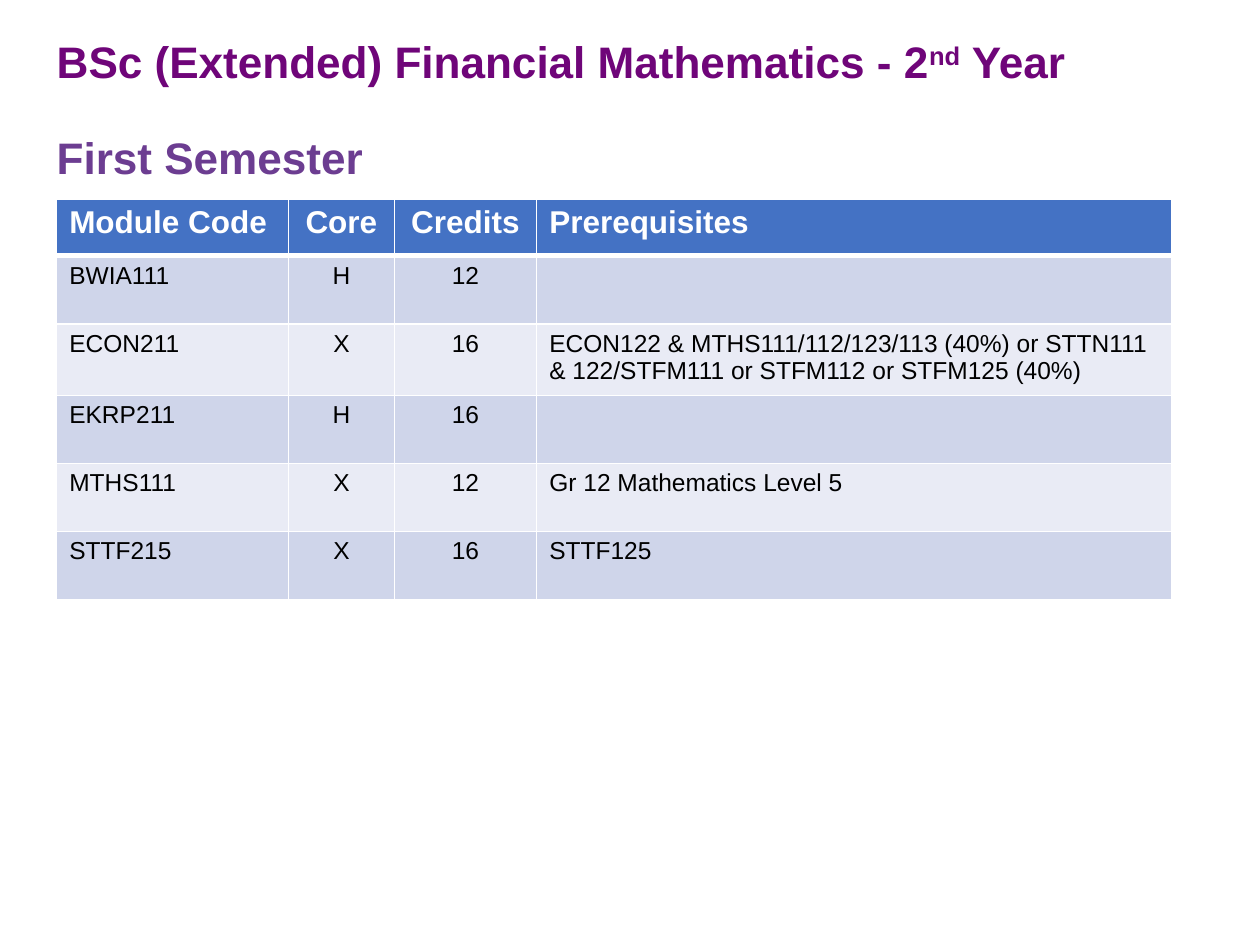
from lxml.etree import SubElement
from pptx import Presentation
from pptx.dml.color import RGBColor
from pptx.enum.text import PP_ALIGN as Align
from pptx.oxml.ns import qn
from pptx.util import Inches, Pt

PURPLE = RGBColor(0x6F, 0x05, 0x79)
VIOLET = RGBColor(0x6C, 0x3D, 0x91)
BLUE = RGBColor(0x44, 0x72, 0xC4)
BANDS = RGBColor(0xCF, 0xD5, 0xEA), RGBColor(0xE9, 0xEB, 0xF5)
WHITE = RGBColor(0xFF, 0xFF, 0xFF)
BLACK = RGBColor(0, 0, 0)

COL_WIDTHS = 1.84, 0.84, 1.13, 5.04
CENTRED_COLS = 1, 2
HEADER_H, ROW_H = 0.45, 0.54
MODULES = [
    ("Module Code", "Core", "Credits", "Prerequisites"),
    ("BWIA111", "H", "12", ""),
    ("ECON211", "X", "16",
     "ECON122 & MTHS111/112/123/113 (40%) or STTN111 "
     "& 122/STFM111 or STFM112 or STFM125 (40%)"),
    ("EKRP211", "H", "16", ""),
    ("MTHS111", "X", "12", "Gr 12 Mathematics Level 5"),
    ("STTF215", "X", "16", "STTF125"),
]


def set_font(font, size, color, bold):
    font.color.rgb = color
    values = {"name": "Arial", "size": Pt(size), "bold": bold}
    for name, value in values.items():
        setattr(font, name, value)


def add_heading(slide, left, top, width, height):
    """Programme title with the semester below it."""
    tf = slide.shapes.add_textbox(*map(Inches, (left, top, width, height))).text_frame
    tf.word_wrap = True
    tf.margin_left = Inches(0.08)
    lines = [
        (PURPLE, 0, [("BSc (Extended) Financial Mathematics - 2", 0),
                     ("nd", 30000), (" Year", 0)]),
        (VIOLET, 28, [("First Semester", 0)]),
    ]
    for i, (color, space, runs) in enumerate(lines):
        p = tf.add_paragraph() if i else tf.paragraphs[0]
        p.line_spacing = 0.9
        p.space_before = Pt(space)
        for text, baseline in runs:
            r = p.add_run()
            r.text = text
            set_font(r.font, 25.2, color, True)
            if baseline:
                r.font._element.set("baseline", str(baseline))


def set_borders(cell, top, bottom):
    """White cell borders; widths in points."""
    tc_pr = cell._tc.get_or_add_tcPr()
    for side, width in {"L": 1, "R": 1, "T": top, "B": bottom}.items():
        ln = SubElement(tc_pr, qn(f"a:ln{side}"), w=str(Pt(width)))
        fill = SubElement(ln, qn("a:solidFill"))
        SubElement(fill, qn("a:srgbClr"), val=str(WHITE))


def add_modules(slide, left, top):
    """Banded table of modules under a blue header row."""
    heights = [HEADER_H] + [ROW_H] * (len(MODULES) - 1)
    box = left, top, sum(COL_WIDTHS), sum(heights)
    table = slide.shapes.add_table(
        len(MODULES), len(COL_WIDTHS), *map(Inches, box)).table
    for col, width in zip(table.columns, COL_WIDTHS):
        col.width = Inches(width)
    for i, (row, height) in enumerate(zip(table.rows, heights)):
        row.height = Inches(height)
        header = i == 0
        style = (18, WHITE, True) if header else (14, BLACK, False)
        for j, cell in enumerate(row.cells):
            set_borders(cell, 3 if i == 1 else 1, 3 if header else 1)
            cell.fill.solid()
            cell.fill.fore_color.rgb = BLUE if header else BANDS[(i - 1) % 2]
            cell.text = MODULES[i][j]
            p = cell.text_frame.paragraphs[0]
            p.alignment = Align.CENTER if j in CENTRED_COLS else Align.LEFT
            set_font(p.font, *style)
            for r in p.runs:
                set_font(r.font, *style)


def main():
    prs = Presentation()
    prs.slide_width, prs.slide_height = Inches(10), Inches(7.5)
    slide = prs.slides.add_slide(prs.slide_layouts[6])
    add_heading(slide, 0.37, 0.27, 9.25, 1.25)
    add_modules(slide, 0.45, 1.58)
    prs.save("out.pptx")


if __name__ == "__main__":
    main()
